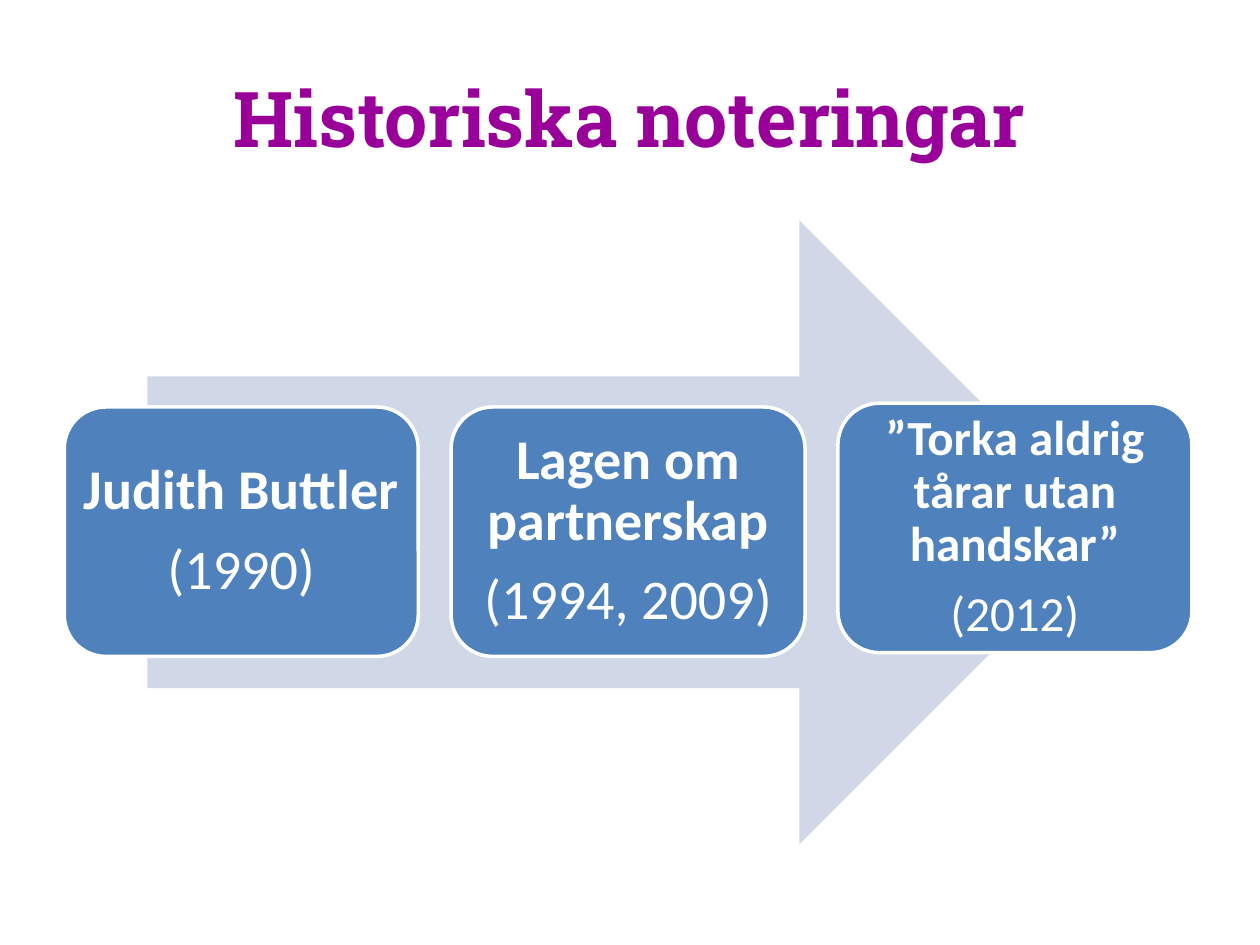
from pptx import Presentation
from pptx.dml.color import RGBColor
from pptx.enum.shapes import MSO_SHAPE as Shape
from pptx.enum.text import MSO_ANCHOR as Anchor, PP_ALIGN as Align
from pptx.util import Inches, Pt

PURPLE = RGBColor(0x99, 0x00, 0x99)
PALE_BLUE = RGBColor(0xD0, 0xD8, 0xE8)
BLUE = RGBColor(0x4F, 0x81, 0xBD)
WHITE = RGBColor(0xFF, 0xFF, 0xFF)

# Grid of the timeline: three equal columns, in inches
FIRST_LEFT, COLUMN_STEP = 0.51, 3.07
CARD_WIDTH, CARD_HEIGHT = 2.81, 1.98

# Heading and year, top, font size and inner margin of each card
EVENTS = [
    ("Judith Buttler", "(1990)", 3.23, 32, 0.03),
    ("Lagen om partnerskap", "(1994, 2009)", 3.23, 32, 0.03),
    ("”Torka aldrig tårar utan handskar”", "(2012)", 3.2, 28, 0.02),
]


def format_text(paragraph, text, name, size, color, bold):
    paragraph.text = text
    paragraph.alignment = Align.CENTER
    values = {"name": name, "size": Pt(size), "bold": bold}
    for attribute, value in values.items():
        setattr(paragraph.runs[0].font, attribute, value)
    paragraph.runs[0].font.color.rgb = color


presentation = Presentation()
presentation.slide_width = Inches(10)
presentation.slide_height = Inches(7.5)
slide = presentation.slides.add_slide(presentation.slide_layouts[6])

# Title
title = slide.shapes.add_textbox(Inches(0.5), Inches(0.3), Inches(9), Inches(1.25))
title.text_frame.word_wrap = True
title.text_frame.vertical_anchor = Anchor.MIDDLE
format_text(title.text_frame.paragraphs[0], "Historiska noteringar",
            "Roboto Slab", 44, PURPLE, True)

# Time arrow behind the cards
arrow = slide.shapes.add_shape(Shape.RIGHT_ARROW, Inches(1.17), Inches(1.75),
                               Inches(7.65), Inches(4.95))
arrow.shadow.inherit = False
arrow.fill.solid()
arrow.fill.fore_color.rgb = PALE_BLUE
arrow.line.fill.background()

# Event cards
for column, (heading, year, top, size, margin) in enumerate(EVENTS):
    left = FIRST_LEFT + column * COLUMN_STEP
    card = slide.shapes.add_shape(Shape.ROUNDED_RECTANGLE, Inches(left), Inches(top),
                                  Inches(CARD_WIDTH), Inches(CARD_HEIGHT))
    card.shadow.inherit = False
    card.fill.solid()
    card.fill.fore_color.rgb = BLUE
    card.line.color.rgb = WHITE
    card.line.width = Pt(2)

    frame = card.text_frame
    frame.word_wrap = True
    frame.vertical_anchor = Anchor.MIDDLE
    for side in ("left", "top", "right", "bottom"):
        setattr(frame, f"margin_{side}", Inches(margin))

    heading_paragraph, year_paragraph = frame.paragraphs[0], frame.add_paragraph()
    format_text(heading_paragraph, heading, "Calibri", size, WHITE, True)
    format_text(year_paragraph, year, "Calibri", size, WHITE, False)
    heading_paragraph.space_after = Pt(round(size * 0.35))
    for paragraph in frame.paragraphs:
        paragraph.line_spacing = 0.9

presentation.save("out.pptx")
